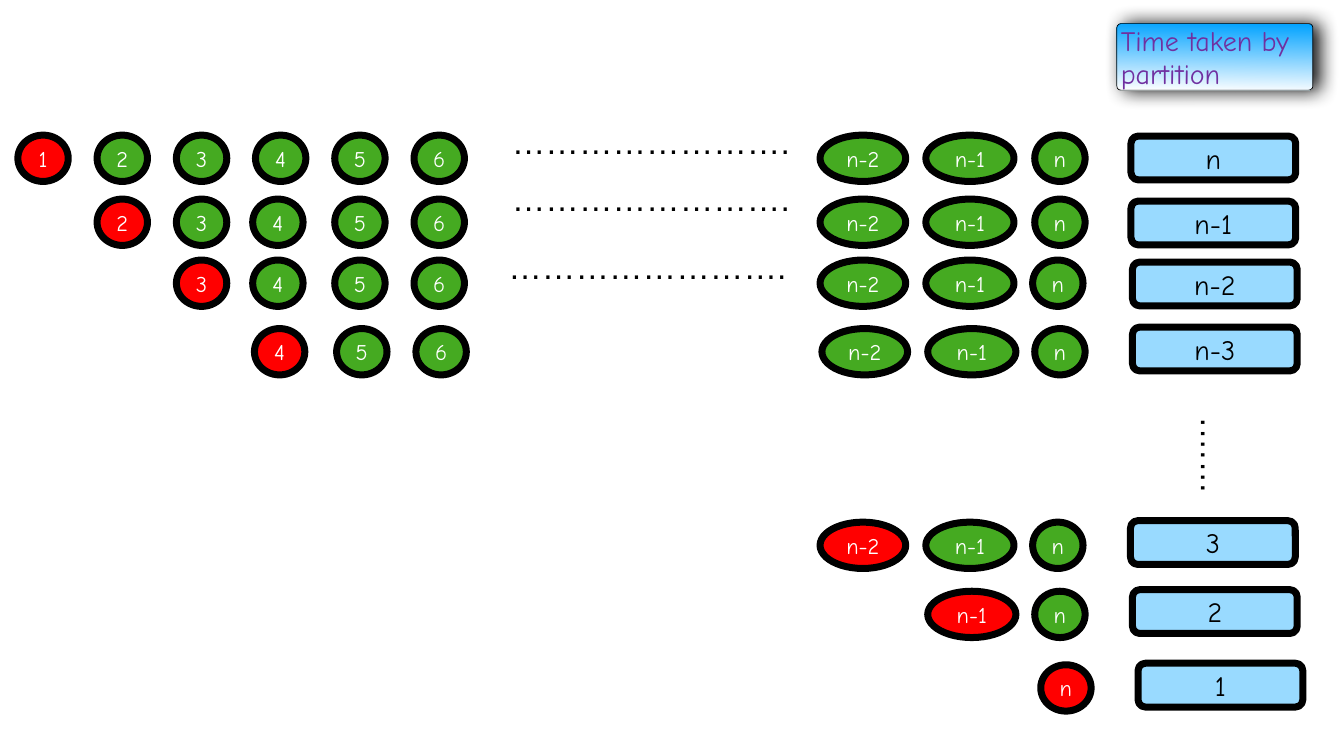
import pptx
import pptx.util
import pptx.dml.color
import pptx.enum.shapes
import pptx.enum.text
import pptx.oxml
import pptx.oxml.ns

Pt = pptx.util.Pt
RGB = pptx.dml.color.RGBColor
KIND = pptx.enum.shapes.MSO_SHAPE
ALIGN = pptx.enum.text.PP_ALIGN

BLACK = RGB(0, 0, 0)
WHITE = RGB(255, 255, 255)
RED = RGB(255, 0, 0)
GREEN = RGB(0x45, 0xAA, 0x21)
SKY = RGB(0x99, 0xDA, 0xFF)
BLUE = RGB(0x00, 0xA2, 0xFF)
PURPLE = RGB(0x70, 0x30, 0xA0)
HAND = "Comic Neue"

# Array items: label, left, width
ITEMS = [
    ("1", 25.5, 72), ("2", 138.7, 72), ("3", 252, 72),
    ("4", 365, 72), ("5", 478.2, 72), ("6", 591.5, 72),
    ("n-2", 1171.5, 122.4), ("n-1", 1322.6, 126), ("n", 1478.2, 72),
]
TALL = 66.2

# Passes: pivot, top, cost, cost left, cost top, item shifts to the right
PASSES = [
    ("1", 193, "n", 1615.7, 194.4, {}),
    ("2", 284.4, "n-1", 1615.7, 287.3, {"4": -4}),
    ("3", 371.5, "n-2", 1617.8, 374.4, {"4": -4, "n": -3}),
    ("4", 469.4, "n-3", 1617.8, 467.3,
     {"4": -1.5, "5": 2.7, "6": 2.7, "n-2": 2.7, "n-1": 2.7}),
    ("n-2", 745.9, "3", 1615, 743.8, {"n": -3}),
    ("n-1", 844.6, "2", 1617.8, 842.4, {"n-1": 2.7}),
    ("n", 949.7, "1", 1625.8, 947.5, {"n": 8.6}),
]

# Dots: text, left, top, width, turn
LONG = "……………………."
DOTS = [
    (LONG, 727.2, 152.6, 409.7, 0),
    (LONG, 727.2, 233.3, 409.7, 0),
    (LONG, 722.2, 331.2, 409.7, 0),
    ("…….", 1645.9, 598.3, 118.8, 270),
]

SHADOW = (
    '<a:outerShdw %s blurRad="355600" dist="114300" dir="0" rotWithShape="0">'
    '<a:srgbClr val="000000"><a:alpha val="97000"/></a:srgbClr></a:outerShdw>'
    % pptx.oxml.ns.nsdecls("a")
)


def write(shape, text, size, font, color, align, wrap=True):
    frame = shape.text_frame
    frame.text = text
    frame.word_wrap = wrap
    frame.vertical_anchor = pptx.enum.text.MSO_ANCHOR.MIDDLE
    frame.margin_left = frame.margin_right = Pt(4)
    frame.margin_top = frame.margin_bottom = Pt(4)
    para = frame.paragraphs[0]
    para.alignment = align
    run = para.runs[0]
    run.font.size = Pt(size)
    run.font.name = font
    run.font.color.rgb = color
    return para


def block(slide, kind, box, line):
    shape = slide.shapes.add_shape(kind, *[Pt(v) for v in box])
    shape.shadow.inherit = False
    shape.line.color.rgb = BLACK
    shape.line.width = Pt(line)
    return shape


def label(slide, kind, box, fill, text, size, color):
    shape = block(slide, kind, box, 10)
    shape.fill.solid()
    shape.fill.fore_color.rgb = fill
    write(shape, text, size, HAND, color, ALIGN.CENTER)


def main():
    deck = pptx.Presentation()
    deck.slide_width = Pt(1920)
    deck.slide_height = Pt(1080)
    slide = deck.slides.add_slide(deck.slide_layouts[6])

    # Heading of the cost column
    head = block(slide, KIND.ROUNDED_RECTANGLE, (1595.5, 33.8, 280, 95), 1)
    head.adjustments[0] = 0.06
    head.fill.gradient()
    head.fill.gradient_angle = 269
    for stop, color in zip(head.fill.gradient_stops, (BLUE, WHITE)):
        stop.color.rgb = color
    glow = head._element.spPr.find(pptx.oxml.ns.qn("a:effectLst"))
    glow.append(pptx.oxml.parse_xml(SHADOW))
    write(head, "Time taken by partition", 40, HAND, PURPLE, ALIGN.LEFT)

    # One row per pass: the pivot, the items after it and the cost
    names = [item[0] for item in ITEMS]
    for pivot, top, cost, left, high, shift in PASSES:
        for name, x, wide in ITEMS[names.index(pivot):]:
            box = (x + shift.get(name, 0), top, wide, TALL)
            fill = RED if name == pivot else GREEN
            label(slide, KIND.OVAL, box, fill, name, 32, WHITE)
        label(slide, KIND.ROUNDED_RECTANGLE, (left, high, 235.4, 62.6),
              SKY, cost, 40, BLACK)

    # Dots for what is left out
    for text, x, y, wide, turn in DOTS:
        dots = slide.shapes.add_textbox(Pt(x), Pt(y), Pt(wide), Pt(105.8))
        dots.rotation = turn
        para = write(dots, text, 48, "Arial", BLACK, ALIGN.LEFT, False)
        para.line_spacing = 0.9
        para.space_before = Pt(45)

    deck.save("out.pptx")


if __name__ == "__main__":
    main()
